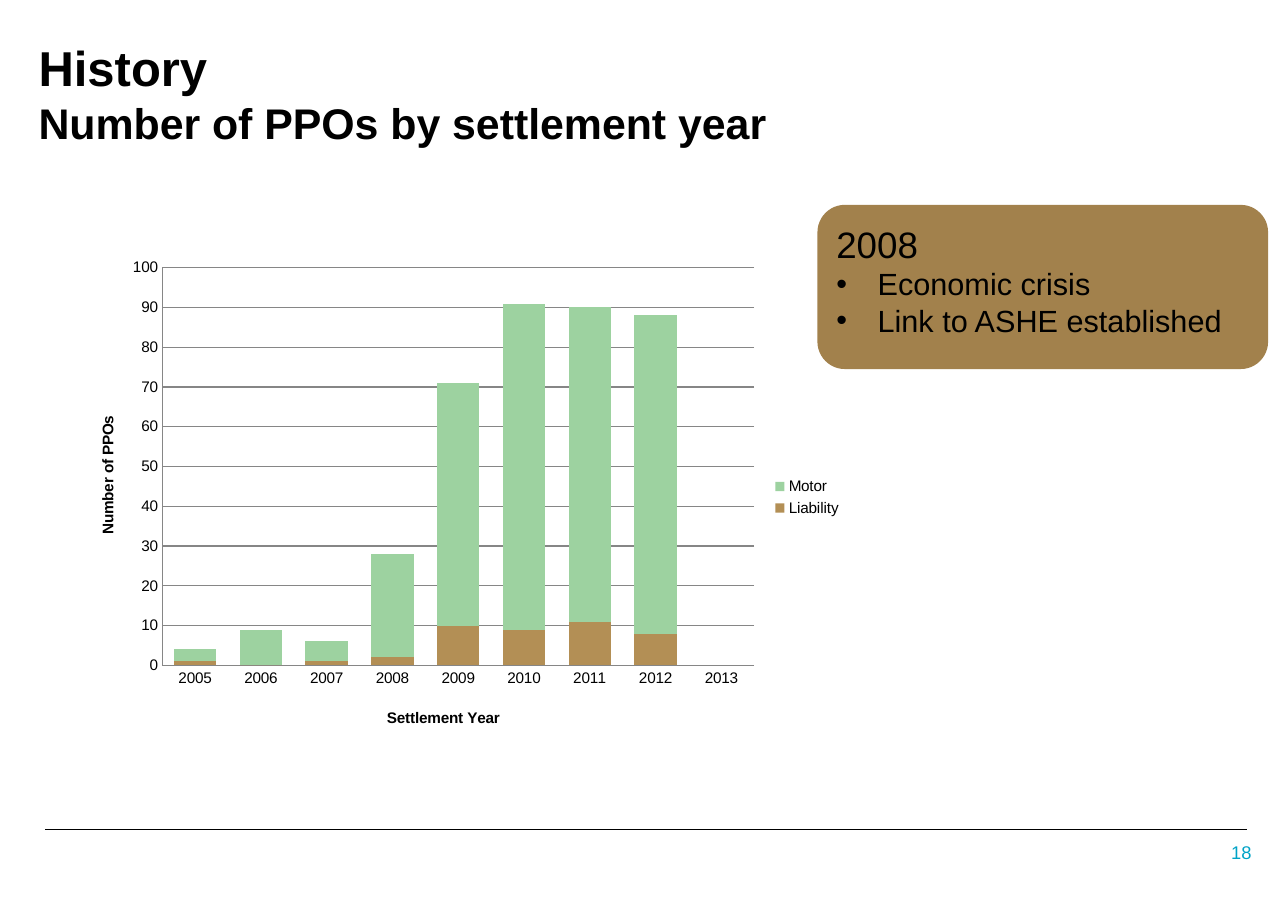
from lxml import etree
from pptx import Presentation
from pptx.chart.data import CategoryChartData
from pptx.dml.color import RGBColor
from pptx.enum.chart import XL_CHART_TYPE, XL_LEGEND_POSITION, XL_TICK_MARK
from pptx.enum.shapes import MSO_CONNECTOR, MSO_SHAPE
from pptx.enum.text import MSO_ANCHOR, MSO_AUTO_SIZE, PP_ALIGN
from pptx.oxml.ns import qn
from pptx.util import Pt

STACKED = XL_CHART_TYPE.COLUMN_STACKED
LEGEND_RIGHT = XL_LEGEND_POSITION.RIGHT
NO_TICKS = XL_TICK_MARK.NONE
STRAIGHT = MSO_CONNECTOR.STRAIGHT
ROUNDED = MSO_SHAPE.ROUNDED_RECTANGLE
TOP, MIDDLE = MSO_ANCHOR.TOP, MSO_ANCHOR.MIDDLE
LEFT, RIGHT = PP_ALIGN.LEFT, PP_ALIGN.RIGHT
NO_FIT = MSO_AUTO_SIZE.NONE

BLACK = RGBColor(0x00, 0x00, 0x00)
GREY = RGBColor(0x86, 0x86, 0x86)
CYAN = RGBColor(0x00, 0xA3, 0xC7)
BROWN = RGBColor(0xA2, 0x81, 0x4C)
TAN = RGBColor(0xB3, 0x8F, 0x55)
GREEN = RGBColor(0x9D, 0xD2, 0xA0)
FONT = "Arial"

# Content
HEADING = [("History", 32), ("Number of PPOs by settlement year", 28)]
YEARS = [str(year) for year in range(2005, 2014)]
CLAIMS = [
    ("Liability", TAN, (1, 0, 1, 2, 10, 9, 11, 8, None)),
    ("Motor", GREEN, (3, 9, 5, 26, 61, 82, 79, 80, None)),
]
EVENT_YEAR = "2008"
EVENTS = ["Economic crisis", "Link to ASHE established"]
PAGE_NUMBER = "18"

# Chart part positions, as fractions of the chart
PLOT_AREA = {"x": 0.116, "y": 0.036, "w": 0.758, "h": 0.804}
YEAR_TITLE = {"x": 0.4, "y": 0.92}
COUNT_TITLE = {"x": 0.03, "y": 0.33}


def style(font, size, color=BLACK, bold=False):
    font.name, font.size, font.bold = FONT, Pt(size), bold
    font.color.rgb = color


def write(paragraph, text, size, color=BLACK, bold=False, align=LEFT, bullet=None):
    if bullet:
        properties = paragraph._p.get_or_add_pPr()
        properties.set("marL", str(Pt(27)))
        properties.set("indent", str(-Pt(27)))
        etree.SubElement(properties, qn("a:buFont")).set("typeface", FONT)
        etree.SubElement(properties, qn("a:buChar")).set("char", bullet)
    paragraph.alignment = align
    run = paragraph.add_run()
    run.text = text
    style(run.font, size, color, bold)


def set_frame(frame, anchor, side, top, bottom):
    frame.word_wrap = True
    frame.auto_size = NO_FIT
    frame.vertical_anchor = anchor
    frame.margin_left = frame.margin_right = Pt(side)
    frame.margin_top, frame.margin_bottom = Pt(top), Pt(bottom)


def place(element, index, position):
    for old in element.findall(qn("c:layout")):
        element.remove(old)
    layout = etree.Element(qn("c:layout"))
    manual = etree.SubElement(layout, qn("c:manualLayout"))
    if "w" in position:
        etree.SubElement(manual, qn("c:layoutTarget")).set("val", "inner")
    for key in "xy":
        etree.SubElement(manual, qn(f"c:{key}Mode")).set("val", "edge")
    for key, value in position.items():
        etree.SubElement(manual, qn(f"c:{key}")).set("val", str(value))
    element.insert(index, layout)


deck = Presentation()
deck.slide_width, deck.slide_height = Pt(841.68), Pt(595.44)
slide = deck.slides.add_slide(deck.slide_layouts[5])

# Footer rule
rule = slide.shapes.add_connector(STRAIGHT, Pt(29.5), Pt(542), Pt(815), Pt(542))
rule.line.color.rgb = BLACK
rule.line.width = Pt(0.75)
etree.SubElement(rule._element.spPr, qn("a:effectLst"))

# Title
title = slide.shapes.title
title.left, title.top, title.width, title.height = Pt(17.3), Pt(17.3), Pt(664.6), Pt(99.4)
set_frame(title.text_frame, TOP, 7.9, 7.5, 4.3)
heading = title.text_frame.paragraphs[0]
for position, (text, size) in enumerate(HEADING):
    if position:
        heading.add_line_break()
    write(heading, text, size, bold=True)

# Page number
page = slide.shapes.add_textbox(Pt(769), Pt(548.6), Pt(58.3), Pt(17.3)).text_frame
set_frame(page, MIDDLE, 9.4, 4.3, 4.3)
write(page.paragraphs[0], PAGE_NUMBER, 12, color=CYAN, align=RIGHT)

# Settlement chart
claims = CategoryChartData()
claims.categories = YEARS
for name, _, counts in CLAIMS:
    claims.add_series(name, counts)
chart = slide.shapes.add_chart(
    STACKED, Pt(46.8), Pt(163.4), Pt(510.5), Pt(323.3), claims).chart
style(chart.font, 10)
chart.has_title = False
chart.has_legend = True
chart.legend.position = LEGEND_RIGHT
chart.legend.include_in_layout = False
columns = chart.plots[0]
columns.vary_by_categories = False
columns.gap_width, columns.overlap = 55, 100
for series, (_, color, _) in zip(columns.series, CLAIMS):
    series.format.fill.solid()
    series.format.fill.fore_color.rgb = color

# Chart axes
year_axis, count_axis = chart.category_axis, chart.value_axis
count_axis.minimum_scale, count_axis.maximum_scale = 0, 100
count_axis.major_unit = 10
count_axis.has_major_gridlines = True
count_axis.major_gridlines.format.line.color.rgb = GREY
count_axis.major_gridlines.format.line.width = Pt(0.75)
for axis, label, position in (
    (year_axis, "Settlement Year", YEAR_TITLE),
    (count_axis, "Number of PPOs", COUNT_TITLE),
):
    axis.major_tick_mark = axis.minor_tick_mark = NO_TICKS
    axis.format.line.color.rgb = GREY
    axis.format.line.width = Pt(0.75)
    write(axis.axis_title.text_frame.paragraphs[0], label, 10, bold=True, align=None)
    place(axis.axis_title.element, 1, position)
place(chart.element.find(".//" + qn("c:plotArea")), 0, PLOT_AREA)

# Event callout
callout = slide.shapes.add_shape(ROUNDED, Pt(534.2), Pt(133.9), Pt(294.5), Pt(107.3))
callout.shadow.inherit = False
callout.fill.solid()
callout.fill.fore_color.rgb = BROWN
callout.line.fill.background()
set_frame(callout.text_frame, TOP, 7.2, 5.5, 3.6)
write(callout.text_frame.paragraphs[0], EVENT_YEAR, 24)
for event in EVENTS:
    write(callout.text_frame.add_paragraph(), event, 20, bullet="•")

deck.save("out.pptx")
